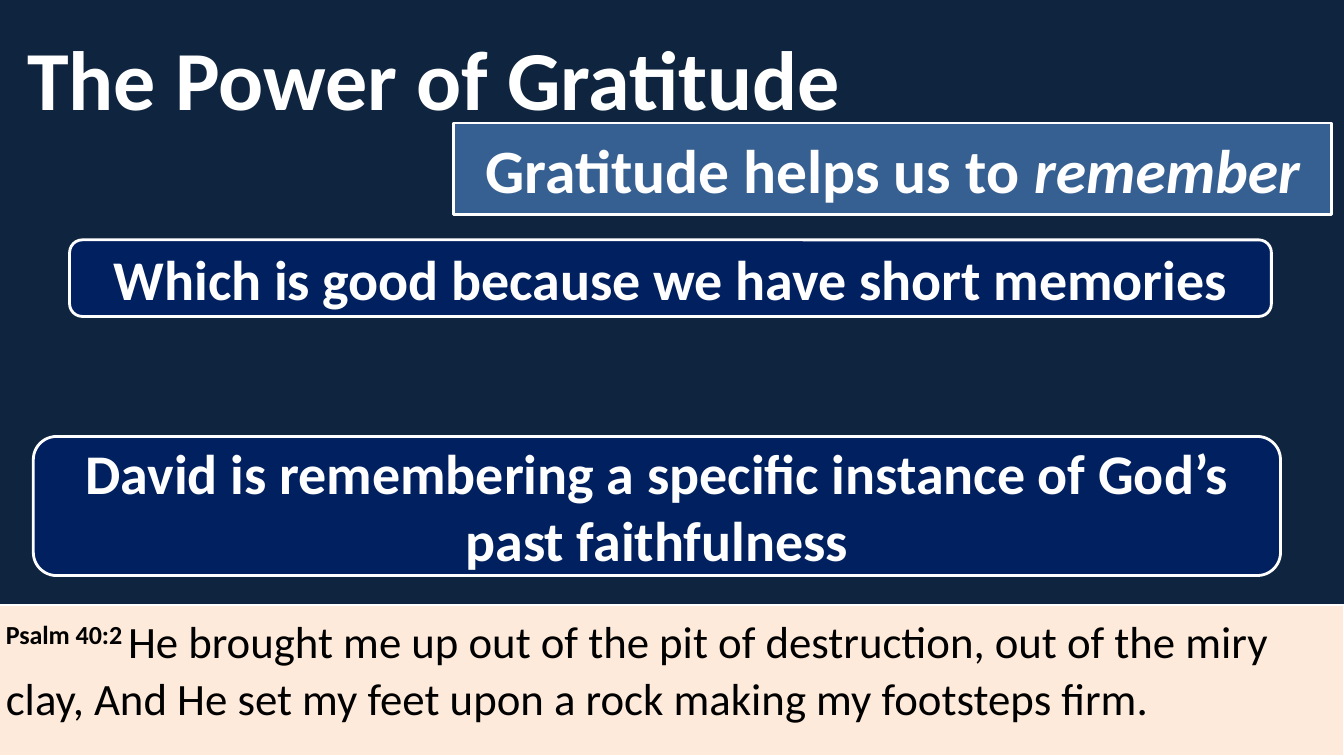
from dataclasses import dataclass

from pptx import Presentation
from pptx import util as u
from pptx.dml.color import RGBColor
from pptx.enum import shapes, text

NIGHT = RGBColor(0x0F, 0x24, 0x3E)
NAVY = RGBColor(0x00, 0x20, 0x60)
STEEL = RGBColor(0x37, 0x60, 0x92)
PEACH = RGBColor(0xFD, 0xEA, 0xDA)
WHITE = RGBColor(0xFF, 0xFF, 0xFF)
BLACK = RGBColor(0x00, 0x00, 0x00)

WIDTH, HEIGHT = u.Inches(13.33), u.Inches(7.5)
RECT = shapes.MSO_SHAPE.RECTANGLE
ROUND = shapes.MSO_SHAPE.ROUNDED_RECTANGLE
MIDDLE, TOP = text.MSO_ANCHOR.MIDDLE, text.MSO_ANCHOR.TOP
CENTER, LEFT = text.PP_ALIGN.CENTER, text.PP_ALIGN.LEFT


@dataclass(frozen=True)
class Run:
    words: str
    bold: bool = True
    italic: bool = False
    raised: bool = False


@dataclass(frozen=True)
class Panel:
    share: tuple[float, float, float, float]
    runs: tuple[Run, ...]
    size: int
    kind: shapes.MSO_SHAPE | None = ROUND
    fill: RGBColor = NAVY
    border: float = 2
    color: RGBColor = WHITE
    align: text.PP_ALIGN = CENTER
    anchor: text.MSO_ANCHOR = MIDDLE
    spacing: float = 1.0


PANELS = (
    Panel((2.48, 57.73, 92.8, 18.4),
          (Run("David is remembering a specific instance of God’s past faithfulness"),), 40),
    Panel((1.28, 1.87, 68.79, 16.67), (Run("The Power of Gratitude"),), 60,
          kind=None, align=LEFT),
    Panel((-0.3, 80, 100.3, 20),
          (Run("Psalm 40:2 ", raised=True),
           Run("He brought me up out of the pit of destruction, out of the miry clay, "
               "And He set my feet upon a rock making my footsteps firm.", bold=False)),
          32, kind=RECT, fill=PEACH, border=1.5, color=BLACK, align=LEFT,
          anchor=TOP, spacing=1.07),
    Panel((33.76, 16.27, 65.34, 12.13),
          (Run("Gratitude helps us to "), Run("remember", italic=True)), 44,
          kind=RECT, fill=STEEL),
    Panel((5.18, 31.73, 89.42, 10.13),
          (Run("Which is good because we have short memories"),), 40),
)


def set_all(target: object, values: dict[str, object]) -> None:
    for name, value in values.items():
        setattr(target, name, value)


def draw_panel(s, panel: Panel) -> None:
    box = [int(part * side / 100)
           for part, side in zip(panel.share, (WIDTH, HEIGHT) * 2)]
    if panel.kind is None:
        sp = s.shapes.add_textbox(*box)
    else:
        sp = s.shapes.add_shape(panel.kind, *box)
        sp.shadow.inherit = False
        sp.fill.solid()
        sp.fill.fore_color.rgb = panel.fill
        sp.line.color.rgb = WHITE
        sp.line.width = u.Pt(panel.border)
    tf = sp.text_frame
    set_all(tf, {"word_wrap": True, "vertical_anchor": panel.anchor})
    p = tf.paragraphs[0]
    set_all(p, {"alignment": panel.align, "line_spacing": panel.spacing})
    for run in panel.runs:
        r = p.add_run()
        r.text = run.words
        set_all(r.font, {"name": "Calibri", "size": u.Pt(panel.size),
                         "bold": run.bold, "italic": run.italic})
        r.font.color.rgb = panel.color
        if run.raised:
            r.font._element.set("baseline", "30000")


def main() -> None:
    prs = Presentation()
    set_all(prs, {"slide_width": WIDTH, "slide_height": HEIGHT})
    s = prs.slides.add_slide(prs.slide_layouts[6])
    s.background.fill.solid()
    s.background.fill.fore_color.rgb = NIGHT
    for panel in PANELS:
        draw_panel(s, panel)
    prs.save("out.pptx")


if __name__ == "__main__":
    main()
